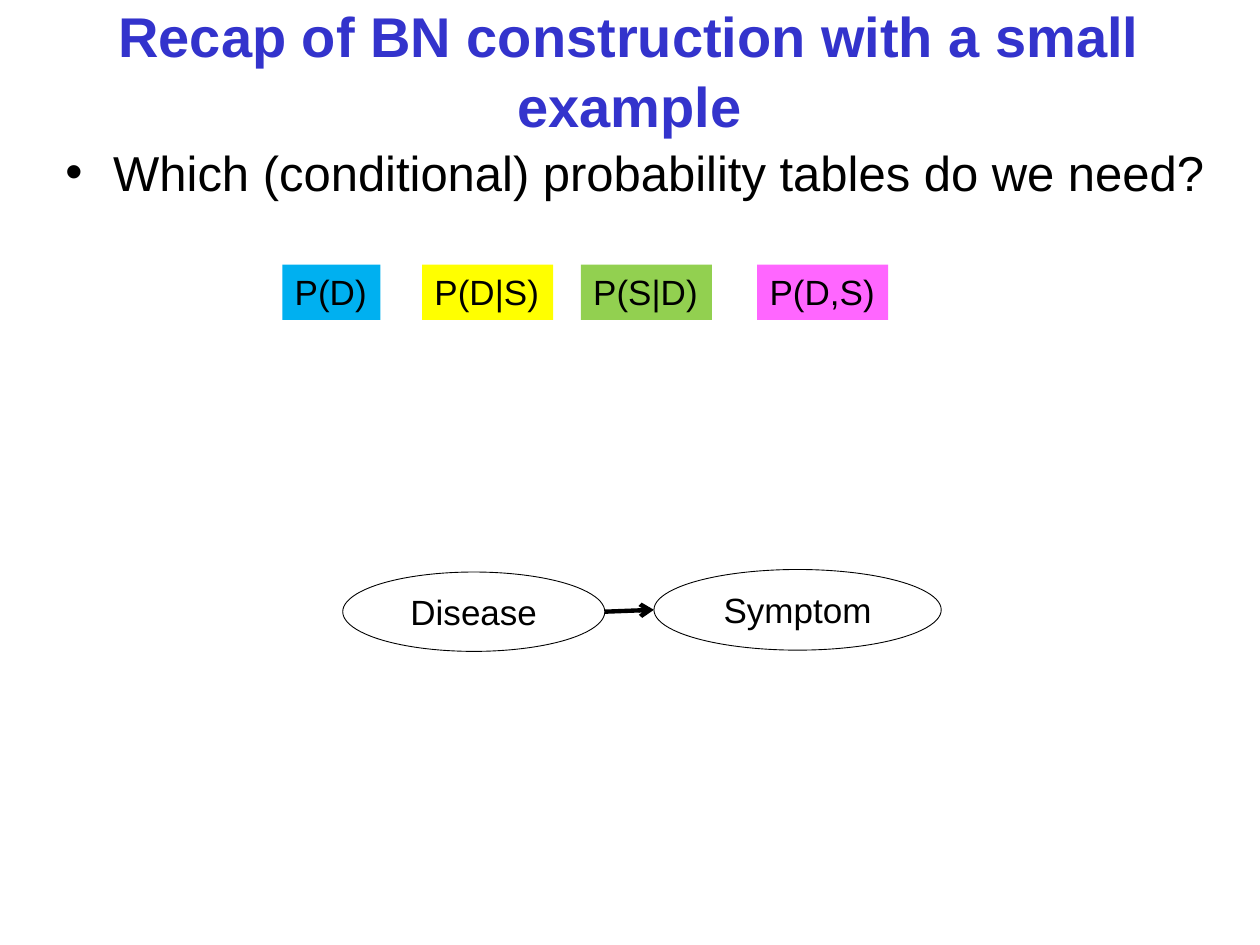
"""Build a slide that recaps Bayesian network construction with a small example."""
from lxml.etree import SubElement
from pptx import Presentation
from pptx.dml.color import RGBColor
from pptx.enum.shapes import MSO_CONNECTOR, MSO_SHAPE
from pptx.enum.text import MSO_ANCHOR, MSO_AUTO_SIZE, PP_ALIGN
from pptx.oxml.ns import qn
from pptx.util import Inches, Pt

COLORS = {
    "title": "3333CC", "ink": "000000", "paper": "FFFFFF", "blue": "00B0F0",
    "yellow": "FFFF00", "green": "92D050", "pink": "FF66FF",
}


def write(shape, text, size=20, color="ink", bold=False, align=PP_ALIGN.LEFT,
          anchor=MSO_ANCHOR.TOP, wrap=True):
    frame = shape.text_frame
    frame.word_wrap = wrap
    frame.auto_size = MSO_AUTO_SIZE.NONE
    frame.vertical_anchor = anchor
    para = frame.paragraphs[0]
    para.alignment = align
    span = para.add_run()
    span.text = text
    span.font.name = "Arial"
    span.font.size = Pt(size)
    span.font.bold = bold
    span.font.color.rgb = RGBColor.from_string(COLORS[color])
    return para


def add_filled(kind, place, color):
    shape = page.shapes.add_shape(kind, *map(Inches, place))
    shape.shadow.inherit = False
    shape.fill.solid()
    shape.fill.fore_color.rgb = RGBColor.from_string(COLORS[color])
    shape.line.fill.background()
    return shape


deck = Presentation()
deck.slide_width, deck.slide_height = Inches(10), Inches(7.5)
page = deck.slides.add_slide(deck.slide_layouts[5])

title = page.shapes.title
title.left, title.top, title.width, title.height = map(Inches, (0.33, 0.17, 9.33, 0.75))
heading = write(title, "Recap of BN construction with a small example", size=32,
                color="title", bold=True, align=PP_ALIGN.CENTER, anchor=MSO_ANCHOR.MIDDLE)
heading.line_spacing = 1.05

body = page.shapes.add_textbox(*map(Inches, (0.42, 1.08, 9.31, 5.83)))
question = write(body, "Which (conditional) probability tables do we need?", size=28)
question.space_before = Pt(3)
bullet = question._p.get_or_add_pPr()
bullet.set("marL", str(Inches(0.38)))
bullet.set("indent", str(-Inches(0.38)))
SubElement(bullet, qn("a:buFont"), typeface="Arial")
SubElement(bullet, qn("a:buChar"), char="•")

nodes = [("Disease", (2.72, 4.54, 2.08, 0.63)), ("Symptom", (5.19, 4.52, 2.28, 0.64))]
ovals = []
for name, place in nodes:
    oval = add_filled(MSO_SHAPE.OVAL, place, "paper")
    oval.line.color.rgb = RGBColor.from_string(COLORS["ink"])
    oval.line.width = Pt(0.5)
    write(oval, name, align=PP_ALIGN.CENTER, anchor=MSO_ANCHOR.MIDDLE)
    ovals.append(oval)

disease, symptom = ovals
arrow = page.shapes.add_connector(
    MSO_CONNECTOR.STRAIGHT,
    disease.left + disease.width, disease.top + disease.height // 2,
    symptom.left, symptom.top + symptom.height // 2)
arrow.line.color.rgb = RGBColor.from_string(COLORS["ink"])
arrow.line.width = Pt(2.5)
SubElement(arrow.line._get_or_add_ln(), qn("a:tailEnd"), type="arrow")
SubElement(arrow._element.spPr, qn("a:effectLst"))

options = [("P(D)", 2.24, 0.78, "blue"), ("P(D|S)", 3.35, 1.04, "yellow"),
           ("P(S|D)", 4.61, 1.04, "green"), ("P(D,S)", 6.01, 1.04, "pink")]
for label, left, width, color in options:
    box = add_filled(MSO_SHAPE.RECTANGLE, (left, 2.1, width, 0.44), color)
    write(box, label, wrap=False)

deck.save("out.pptx")
